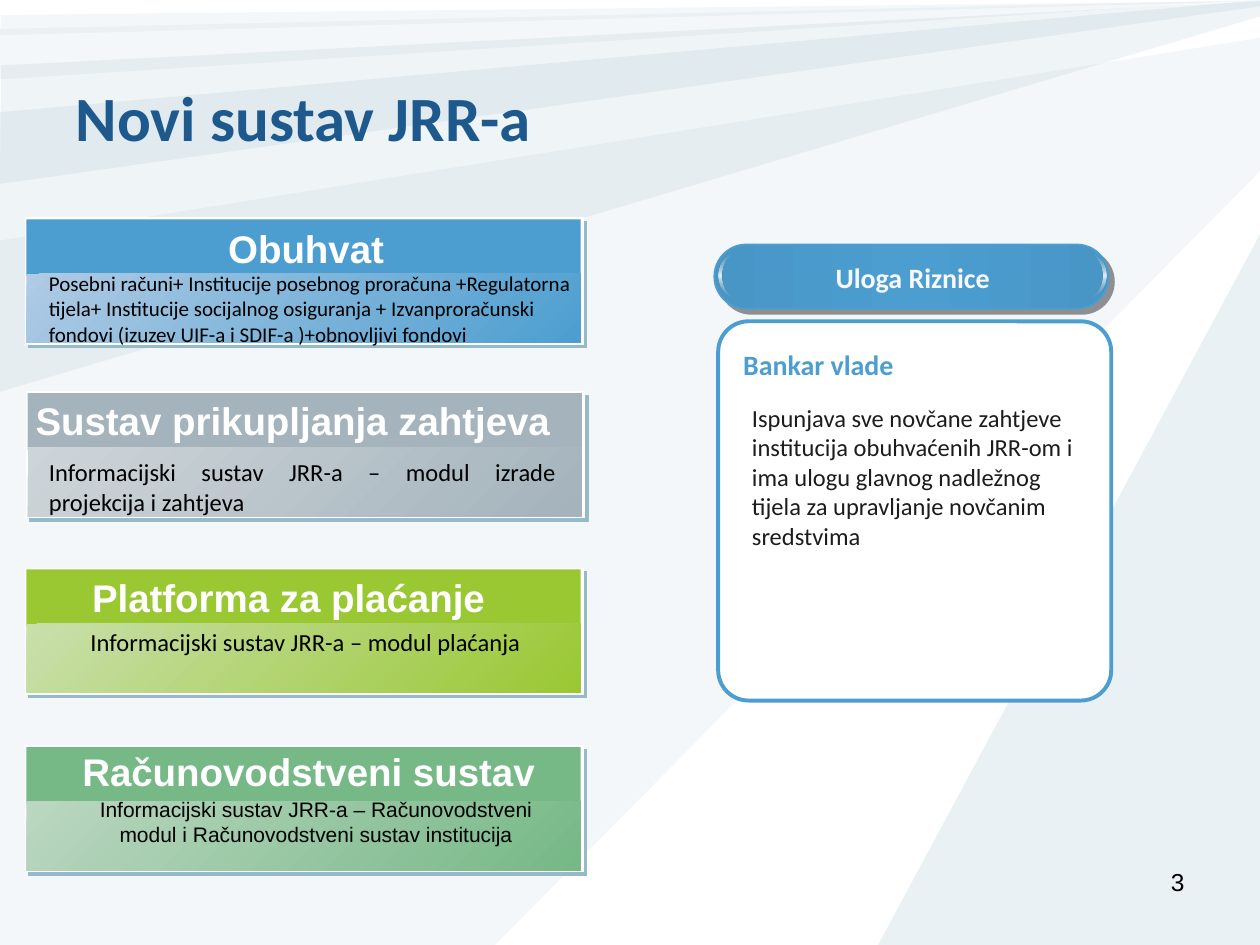
from typing import NamedTuple

from lxml.etree import SubElement
from pptx import Presentation
from pptx.dml.color import RGBColor
from pptx.enum.shapes import MSO_SHAPE
from pptx.enum.text import MSO_ANCHOR, PP_ALIGN
from pptx.oxml.ns import qn
from pptx.util import Pt

COLORS = {
    "beam": "97BAC9", "title": "1E598E", "white": "FFFFFF", "black": "000000",
    "blue": "4C9ED0", "blue_light": "B0CBE4", "blue_dark": "4896C6",
    "gray": "A4B3BC", "gray_light": "CED5D9",
    "lime": "9AC832", "lime_light": "C9DFAC",
    "green": "76B886", "green_light": "BBD7C1",
    "shade": "292929", "gloss": "B6B6B6", "pill_text": "F8F8F8", "ink": "1C1C1C",
}


class Frame(NamedTuple):
    """Left, top, width and height in points."""
    left: float
    top: float
    width: float
    height: float


class Stop(NamedTuple):
    position: int
    color: str
    alpha: int = 100


class Shadow(NamedTuple):
    color: str
    alpha: int
    distance: float


class Beam(NamedTuple):
    alpha: int
    points: list[tuple[float, float]]


class Panel(NamedTuple):
    left: float
    top: float
    color: str
    heading: str
    heading_frame: Frame
    body: str
    body_frame: Frame
    body_format: dict


BEAMS = [
    Beam(10, [(720, 21.6), (0, 137.5), (0, 540), (283, 540), (720, 97.9)]),
    Beam(20, [(720, 133.9), (501.8, 540), (720, 540)]),
    Beam(10, [(0.7, 8.6), (0, 20.2), (720, 0.7)]),
    Beam(10, [(719.3, 0), (0, 45.4), (0, 16.6)]),
    Beam(15, [(720, 9.4), (0, 223.9), (0, 64.1), (720, 0)]),
    Beam(14, [(720, 0.7), (0.7, 37.4), (0, 105.1), (720, 3.6)]),
]

PANELS = [
    Panel(14.4, 124.6, "blue", "Obuhvat", Frame(79.2, 125.3, 191.5, 33.8),
          "Posebni računi+ Institucije posebnog proračuna +Regulatorna tijela+ "
          "Institucije socijalnog osiguranja + Izvanproračunski fondovi "
          "(izuzev UIF-a i SDIF-a )+obnovljivi fondovi",
          Frame(20.9, 151.2, 329, 51.1), {"size": 12}),
    Panel(15.1, 223.9, "gray", "Sustav prikupljanja zahtjeva",
          Frame(-31, 223.2, 396.7, 33.8),
          "Informacijski sustav JRR-a – modul izrade projekcija i zahtjeva",
          Frame(20.9, 257.8, 303.8, 41), {"align": PP_ALIGN.JUSTIFY}),
    Panel(14.4, 324.7, "lime", "Platforma za plaćanje",
          Frame(17.3, 324.7, 295.2, 33.8),
          "Informacijski sustav JRR-a – modul plaćanja",
          Frame(24.5, 355, 300.2, 49.7), {"align": PP_ALIGN.CENTER}),
    Panel(14.4, 426.2, "green", "Računovodstveni sustav",
          Frame(28.8, 424.1, 295.2, 33.8),
          "Informacijski sustav JRR-a – Računovodstveni modul i "
          "Računovodstveni sustav institucija",
          Frame(37.4, 451.4, 286.6, 58.3),
          {"size": 12, "font": "Arial", "align": PP_ALIGN.CENTER}),
]


def rgb(name: str) -> RGBColor:
    return RGBColor.from_string(COLORS[name])


def add_color(parent, name: str, alpha: int) -> None:
    color = SubElement(parent, qn("a:srgbClr"), val=COLORS[name])
    if alpha < 100:
        SubElement(color, qn("a:alpha"), val=str(alpha * 1000))


def fill_gradient(shape, stops: list[Stop], angle: int) -> None:
    """Fill with the stops along a clockwise angle in degrees."""
    shape.fill.gradient()
    shape.fill.gradient_angle = -angle % 360
    stop_list = shape.element.find(".//" + qn("a:gsLst"))
    for old in list(stop_list):
        stop_list.remove(old)
    for stop in stops:
        node = SubElement(stop_list, qn("a:gs"), pos=str(stop.position * 1000))
        add_color(node, stop.color, stop.alpha)


def add_box(page, frame: Frame, *, kind=MSO_SHAPE.RECTANGLE, fill=None, stops=None,
            angle=0, line=None, line_width=0.75, shadow=None, adjust=None):
    box = page.shapes.add_shape(kind, *map(Pt, frame))
    box.shadow.inherit = False
    if adjust is not None:
        box.adjustments[0] = adjust
    if stops:
        fill_gradient(box, stops, angle)
    else:
        box.fill.solid()
        box.fill.fore_color.rgb = rgb(fill)
    if line:
        box.line.color.rgb = rgb(line)
        box.line.width = Pt(line_width)
    else:
        box.line.fill.background()
    if shadow:
        effects = box.element.find(".//" + qn("a:effectLst"))
        outer = SubElement(effects, qn("a:outerShdw"), blurRad="0", algn="ctr",
                           dist=str(Pt(shadow.distance)), dir="2700000", rotWithShape="0")
        add_color(outer, shadow.color, shadow.alpha)
    return box


def format_text(text_frame, text: str, *, size=14, font="Calibri", color="black",
                bold=False, align=PP_ALIGN.LEFT, anchor=MSO_ANCHOR.TOP) -> None:
    text_frame.word_wrap = True
    text_frame.vertical_anchor = anchor
    para = text_frame.paragraphs[0]
    para.alignment = align
    span = para.add_run()
    span.text = text
    span.font.size = Pt(size)
    span.font.name = font
    span.font.bold = bold
    span.font.color.rgb = rgb(color)


def add_text(page, frame: Frame, text: str, **text_format) -> None:
    box = page.shapes.add_textbox(*map(Pt, frame))
    format_text(box.text_frame, text, **text_format)


def draw_beam(page, beam: Beam) -> None:
    first, *rest = [(round(x * 10), round(y * 10)) for x, y in beam.points]
    builder = page.shapes.build_freeform(*first, scale=Pt(0.1))
    builder.add_line_segments(rest, close=True)
    shape = builder.convert_to_shape()
    shape.shadow.inherit = False
    shape.line.fill.background()
    fill_gradient(shape, [Stop(at, "beam", beam.alpha) for at in (0, 100)], 0)


def draw_panel(page, panel: Panel) -> None:
    inner = panel.left + 0.7
    add_box(page, Frame(panel.left, panel.top, 319, 72), fill="white", line="white",
            shadow=Shadow("beam", 100, 2.8))
    add_box(page, Frame(inner, panel.top + 0.7, 316.8, 32.4), fill=panel.color)
    add_box(page, Frame(inner, panel.top + 31.7, 316.8, 39.6), angle=45,
            stops=[Stop(0, panel.color + "_light"), Stop(100, panel.color)])
    add_text(page, panel.body_frame, panel.body, **panel.body_format)
    add_text(page, panel.heading_frame, panel.heading, size=22, font="Arial",
             color="white", bold=True, align=PP_ALIGN.CENTER)


def draw_treasury_role(page) -> None:
    add_box(page, Frame(410.4, 183.6, 224.6, 216.7), kind=MSO_SHAPE.ROUNDED_RECTANGLE,
            adjust=0.08, fill="white", line="blue", line_width=2.25)
    add_box(page, Frame(408.2, 139.7, 225.4, 36.7), kind=MSO_SHAPE.ROUNDED_RECTANGLE,
            adjust=0.5, line="blue", line_width=1, shadow=Shadow("shade", 50, 4.2),
            stops=[Stop(0, "blue_dark"), Stop(50, "blue"), Stop(100, "blue_dark")])
    for left, rotation in ((622.1, 180), (410.4, 0)):
        moon = add_box(page, Frame(left, 144.7, 10.1, 25.2), kind=MSO_SHAPE.MOON,
                       adjust=0.22, angle=90,
                       stops=[Stop(0, "gloss", 0), Stop(50, "white", 84), Stop(100, "gloss", 0)])
        moon.rotation = rotation
    add_text(page, Frame(433.4, 145.4, 176.4, 26.6), "Uloga Riznice", size=16,
             color="pill_text", bold=True, align=PP_ALIGN.CENTER)
    add_text(page, Frame(417.6, 195.1, 248.4, 26.6), "Bankar vlade", size=16,
             color="blue", bold=True)
    add_text(page, Frame(422.6, 226.8, 198, 74.9),
             "Ispunjava sve novčane zahtjeve institucija obuhvaćenih JRR-om i ima ulogu "
             "glavnog nadležnog tijela za upravljanje novčanim sredstvima", color="ink")


def main() -> None:
    deck = Presentation()
    deck.slide_width, deck.slide_height = Pt(720), Pt(540)
    page = deck.slides.add_slide(deck.slide_layouts[5])
    for beam in BEAMS:
        draw_beam(page, beam)
    title = page.shapes.title
    title.left, title.top, title.width, title.height = map(Pt, Frame(36, 21.6, 581.8, 90))
    format_text(title.text_frame, "Novi sustav JRR-a", size=36, color="title", bold=True,
                anchor=MSO_ANCHOR.MIDDLE)
    title.element.getparent().append(title.element)  # in front of the beams
    for panel in PANELS:
        draw_panel(page, panel)
    draw_treasury_role(page)
    add_text(page, Frame(516.2, 491.8, 167.8, 37.4), "3", font="Arial", align=PP_ALIGN.RIGHT)
    deck.save("out.pptx")


if __name__ == "__main__":
    main()
